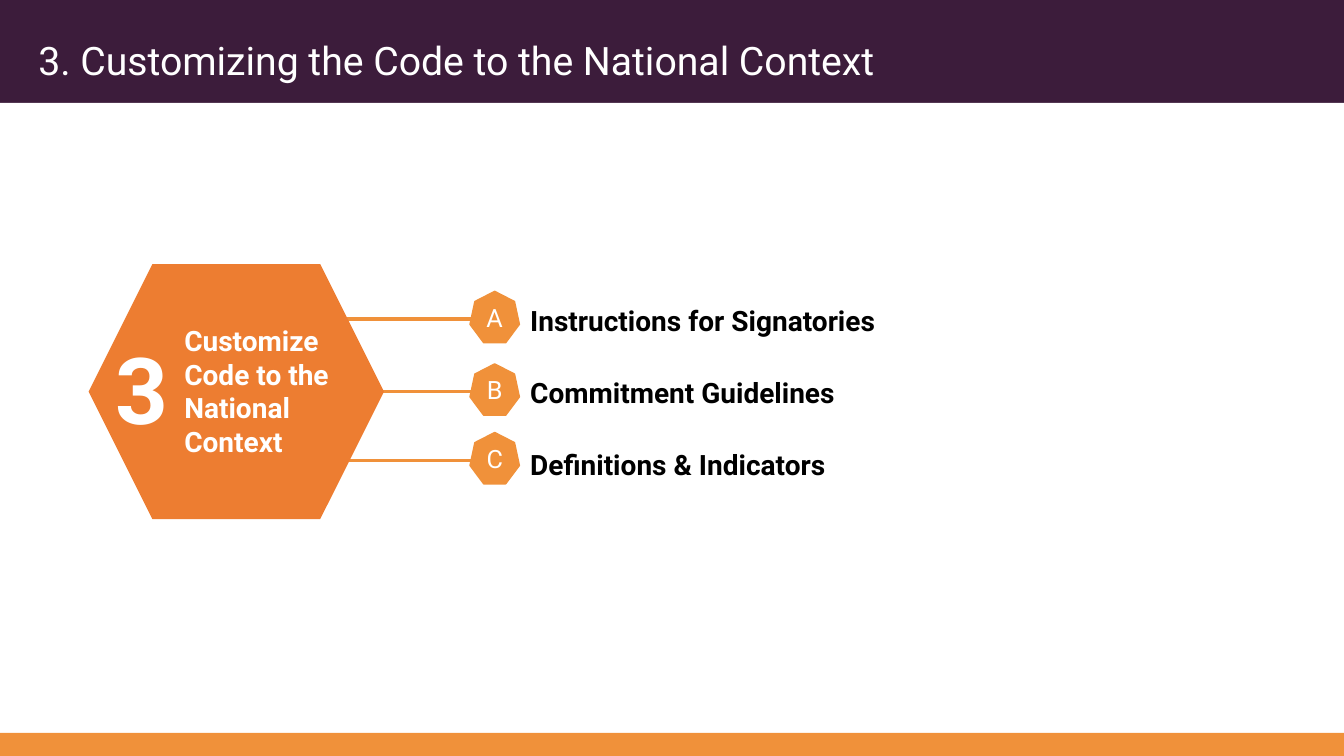
import pptx
import pptx.util
import pptx.dml.color
import pptx.enum.shapes
import pptx.enum.text
import pptx.oxml
import pptx.oxml.ns
from dataclasses import dataclass


@dataclass(frozen=True)
class Theme:
    font: str = "Roboto"
    plum: str = "3C1C3B"
    amber: str = "F0913A"
    orange: str = "ED7D31"
    white: str = "FFFFFF"
    black: str = "000000"
    title: int = 28
    text: int = 20
    letter: int = 18
    number: int = 66


theme = Theme()
rgb = pptx.dml.color.RGBColor.from_string
kinds = pptx.enum.shapes.MSO_SHAPE
anchors = pptx.enum.text.MSO_ANCHOR
aligns = pptx.enum.text.PP_ALIGN

presentation = pptx.Presentation()
presentation.slide_width = pptx.util.Inches(13.333)
presentation.slide_height = pptx.util.Inches(7.5)
slide = presentation.slides.add_slide(presentation.slide_layouts[1])

COLUMNS, ROWS = 160, 90
cell = presentation.slide_height / ROWS


def add_block(shapes, kind, box, color, outline=None):
    shape = shapes.add_shape(kind, *[round(value * cell) for value in box])
    shape.shadow.inherit = False
    shape.fill.solid()
    shape.fill.fore_color.rgb = rgb(color)
    if outline:
        shape.line.color.rgb = rgb(outline)
        shape.line.width = pptx.util.Pt(1)
    else:
        shape.line.fill.background()
    return shape


def write(shape, lines, size, color, bold=False, align=aligns.LEFT, anchor=anchors.TOP,
          indent=0, line_spacing=1.0, space_before=0):
    frame = shape.text_frame
    frame.word_wrap = True
    frame.auto_size = pptx.enum.text.MSO_AUTO_SIZE.NONE
    frame.vertical_anchor = anchor
    frame.text = "\n".join(lines)
    for paragraph in frame.paragraphs:
        paragraph.alignment = align
        paragraph.line_spacing = line_spacing
        paragraph.space_before = pptx.util.Pt(space_before)
        properties = paragraph._p.get_or_add_pPr()
        properties.set("marL", str(round(indent * cell)))
        properties.set("indent", "0")
        pptx.oxml.ns.qn("a:buNone")
        properties.append(pptx.oxml.parse_xml(
            f'<a:buNone {pptx.oxml.ns.nsdecls("a")}/>'))
        font = paragraph.runs[0].font
        font.name = theme.font
        font.size = pptx.util.Pt(size)
        font.bold = bold
        font.color.rgb = rgb(color)


bands = [
    (87.24, 2.76, theme.amber),
    (0, 13.68, theme.plum),
    (12.24, 1.68, theme.white),
]
for top, height, color in bands:
    add_block(slide.shapes, kinds.RECTANGLE, (0, top, COLUMNS, height), color)

steps = [
    ("A", "Instructions for Signatories", 34.68),
    ("B", "Commitment Guidelines", 43.32),
    ("C", "Definitions & Indicators", 51.48),
]
for letter, label, top in steps:
    group = slide.shapes.add_group_shape()
    middle = top + 3.3
    ends = [round(value * cell) for value in (39.24, middle, 56.16, middle)]
    connector = group.shapes.add_connector(pptx.enum.shapes.MSO_CONNECTOR.STRAIGHT, *ends)
    connector.line.color.rgb = rgb(theme.amber)
    connector.line.width = pptx.util.Pt(2.25)
    connector._element.spPr.append(pptx.oxml.parse_xml(
        f'<a:effectLst {pptx.oxml.ns.nsdecls("a")}/>'))
    badge = add_block(group.shapes, kinds.HEPTAGON, (55.95, top, 5.88, 6.12),
                      theme.amber, theme.amber)
    write(badge, [letter], theme.letter, theme.white,
          align=aligns.CENTER, anchor=anchors.MIDDLE)

add_block(slide.shapes, kinds.HEXAGON, (10.56, 31.44, 35.16, 30.36), theme.orange)

captions = [
    ((12.6, 39, 7.2, 14.52), ["3"], theme.number, 0),
    ((14.76, 37.92, 29.76, 17.4), ["Customize", "Code to the National Context"], theme.text, 6),
]
for box, lines, size, indent in captions:
    caption = slide.shapes.add_textbox(*[round(value * cell) for value in box])
    write(caption, lines, size, theme.white, bold=True, indent=indent)

title, body = slide.shapes.title, slide.placeholders[1]
frames = [(title, (1.92, 2.4, 158.04, 8.28)), (body, (61.92, 34.92, 63, 22.8))]
for placeholder, box in frames:
    placeholder.left, placeholder.top, placeholder.width, placeholder.height = [
        round(value * cell) for value in box]
    slide.shapes.element.append(placeholder.element)

write(title, ["3. Customizing the Code to the National Context"], theme.title, theme.white,
      anchor=anchors.MIDDLE, indent=1.44, line_spacing=1.2)
write(body, [label for letter, label, top in steps], theme.text, theme.black,
      bold=True, line_spacing=1.15, space_before=24)

presentation.save("out.pptx")
